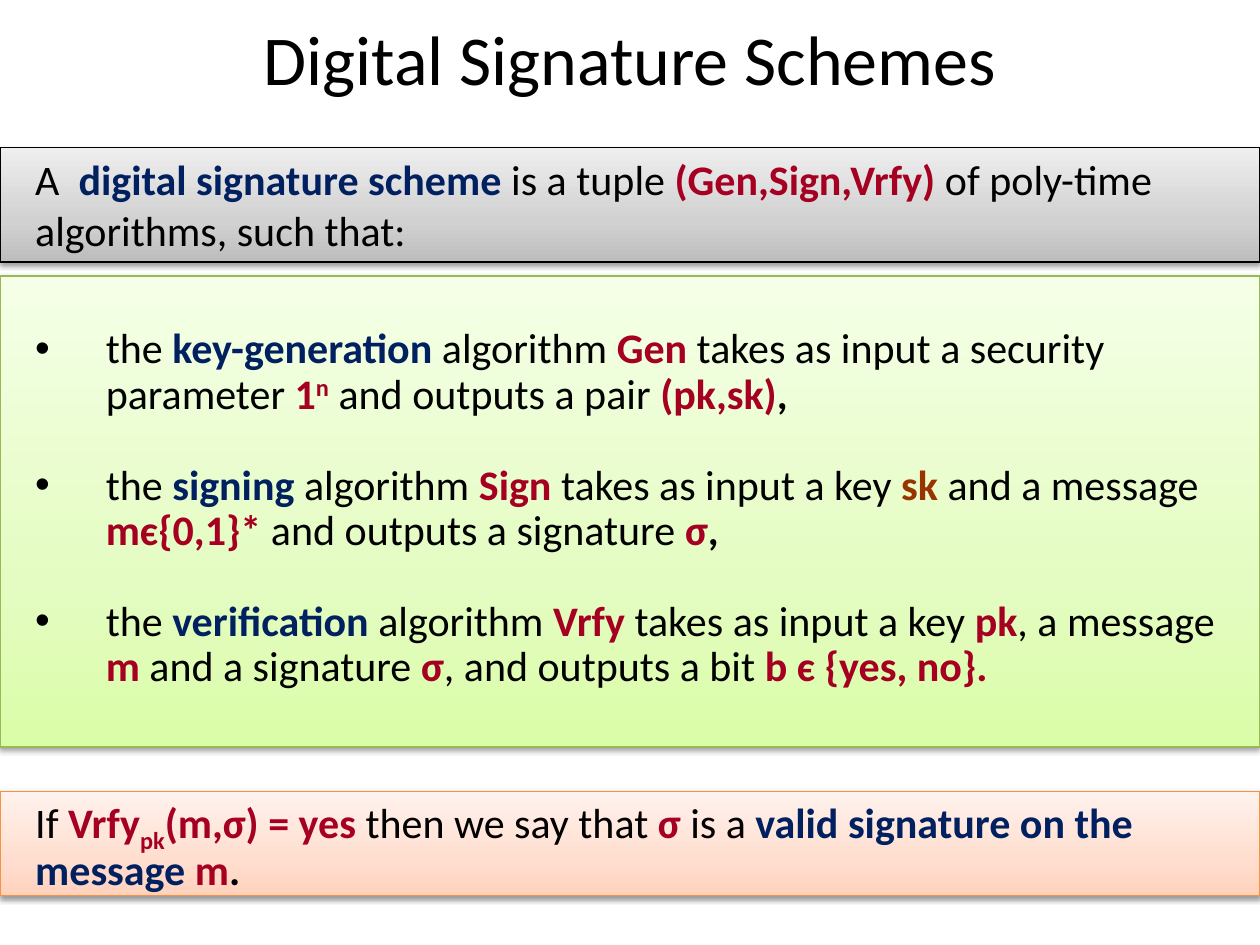
"""Build a slide that defines digital signature schemes."""
from pptx import Presentation
from pptx.dml.color import RGBColor
from pptx.enum.shapes import MSO_SHAPE
from pptx.enum.text import MSO_ANCHOR, PP_ALIGN
from pptx.oxml import parse_xml
from pptx.oxml.ns import nsdecls
from pptx.util import Inches, Pt

RECTANGLE = MSO_SHAPE.RECTANGLE
TOP, MIDDLE = MSO_ANCHOR.TOP, MSO_ANCHOR.MIDDLE
LEFT, CENTER = PP_ALIGN.LEFT, PP_ALIGN.CENTER

COLORS = {"black": "000000", "navy": "002060", "crimson": "A50021", "brown": "993300",
          "green_edge": "98B955", "orange_edge": "F69240"}
STYLES = {
    "plain": ("black", False, 0),
    "strong": ("black", True, 0),
    "term": ("navy", True, 0),
    "symbol": ("crimson", True, 0),
    "secret": ("brown", True, 0),
    "super": ("crimson", True, 30000),
    "sub": ("crimson", True, -25000),
}

TUPLE_INTRO = [
    ("A  ", "plain"), ("digital signature scheme ", "term"), ("is a tuple ", "plain"),
    ("(Gen,Sign,Vrfy)", "symbol"), (" of poly-time algorithms, such that:", "plain"),
]
ALGORITHMS = [
    [("the ", "plain"), ("key-generation ", "term"), ("algorithm ", "plain"), ("Gen", "symbol"),
     (" takes as input a security parameter ", "plain"), ("1", "symbol"), ("n", "super"),
     (" and outputs a pair ", "plain"), ("(pk,sk)", "symbol"), (",", "strong")],
    [("the ", "plain"), ("signing ", "term"), ("algorithm ", "plain"), ("Sign ", "symbol"),
     ("takes as input a key ", "plain"), ("sk ", "secret"), ("and a message ", "plain"),
     ("mє{0,1}* ", "symbol"), ("and outputs a signature ", "plain"), ("σ", "symbol"),
     (",", "strong")],
    [("the ", "plain"), ("verification", "term"), (" algorithm ", "plain"), ("Vrfy ", "symbol"),
     ("takes as input a key ", "plain"), ("pk", "symbol"), (", a message ", "plain"),
     ("m", "symbol"), (" and a signature ", "plain"), ("σ", "symbol"),
     (", and outputs a bit ", "plain"), ("b є {yes, no}.", "symbol")],
]
VALIDITY = [
    ("If ", "plain"), ("Vrfy", "symbol"), ("pk", "sub"), ("(m,σ) = yes ", "symbol"),
    ("then we say that ", "plain"), ("σ ", "symbol"), ("is a ", "plain"),
    ("valid signature on the message ", "term"), ("m", "symbol"), (".", "strong"),
]
PANELS = [
    {"top": 1.17, "height": 0.91, "stops": ("BDBDBD", "D1D1D1", "EEEEEE"), "edge": "black",
     "inset": 0.05, "spacing": 1.0, "bullets": False, "paragraphs": [TUPLE_INTRO]},
    {"top": 2.19, "height": 3.74, "stops": ("DAFDA7", "E4FCC2", "F5FFE7"), "edge": "green_edge",
     "inset": 0.41, "spacing": 0.9, "bullets": True, "paragraphs": ALGORITHMS},
    {"top": 6.28, "height": 0.83, "stops": ("FFD2BD", "FFDED0", "FFF2ED"), "edge": "orange_edge",
     "inset": 0.05, "spacing": 0.9, "bullets": False, "paragraphs": [VALIDITY]},
]


def add_runs(paragraph, pieces, size):
    for text, style in pieces:
        color, bold, baseline = STYLES[style]
        run = paragraph.add_run()
        run.text = text
        font_format = {"name": "Calibri", "size": Pt(size), "bold": bold}
        for attribute, value in font_format.items():
            setattr(run.font, attribute, value)
        run.font.color.rgb = RGBColor.from_string(COLORS[color])
        if baseline:
            run.font._element.set("baseline", str(baseline))


def style_panel(panel, stops, edge):
    properties = panel._element.spPr
    stop_xml = "".join(
        f'<a:gs pos="{position}"><a:srgbClr val="{color}"/></a:gs>'
        for position, color in zip((0, 35000, 100000), stops))
    properties.insert(2, parse_xml(
        f'<a:gradFill {nsdecls("a")} rotWithShape="1"><a:gsLst>{stop_xml}</a:gsLst>'
        '<a:lin ang="16200000" scaled="0"/></a:gradFill>'))
    panel.line.color.rgb = RGBColor.from_string(COLORS[edge])
    panel.line.width = Pt(0.75)
    properties.append(parse_xml(
        f'<a:effectLst {nsdecls("a")}><a:outerShdw blurRad="{Pt(3.1)}" dist="{Pt(1.6)}" '
        'dir="5400000" rotWithShape="0"><a:srgbClr val="000000"><a:alpha val="38000"/>'
        '</a:srgbClr></a:outerShdw></a:effectLst>'))


deck = Presentation()
deck.slide_width, deck.slide_height = Inches(10), Inches(7.5)
slide = deck.slides.add_slide(deck.slide_layouts[6])

title = slide.shapes.add_textbox(Inches(0.75), Inches(-0.17), Inches(8.5), Inches(1.25))
title.text_frame.word_wrap = True
title.text_frame.vertical_anchor = MIDDLE
heading = title.text_frame.paragraphs[0]
heading.alignment = CENTER
add_runs(heading, [("Digital Signature Schemes", "plain")], 40)

for content in PANELS:
    panel = slide.shapes.add_shape(
        RECTANGLE, Inches(0), Inches(content["top"]), Inches(10), Inches(content["height"]))
    style_panel(panel, content["stops"], content["edge"])
    frame = panel.text_frame
    frame_format = {
        "word_wrap": True, "vertical_anchor": TOP,
        "margin_left": Inches(0.28), "margin_right": Inches(0.1),
        "margin_top": Inches(content["inset"]), "margin_bottom": Inches(0.05),
    }
    for attribute, value in frame_format.items():
        setattr(frame, attribute, value)
    for index, pieces in enumerate(content["paragraphs"]):
        paragraph = frame.add_paragraph() if index else frame.paragraphs[0]
        paragraph.alignment = LEFT
        paragraph.line_spacing = content["spacing"]
        if index:
            paragraph.space_before = Pt(26)
        if content["bullets"]:
            indent = paragraph._p.get_or_add_pPr()
            indent.set("marL", str(Inches(0.56)))
            indent.set("indent", str(Inches(-0.56)))
            indent.append(parse_xml(f'<a:buFont {nsdecls("a")} typeface="Arial"/>'))
            indent.append(parse_xml(f'<a:buChar {nsdecls("a")} char="•"/>'))
        add_runs(paragraph, pieces, 24)

deck.save("out.pptx")
